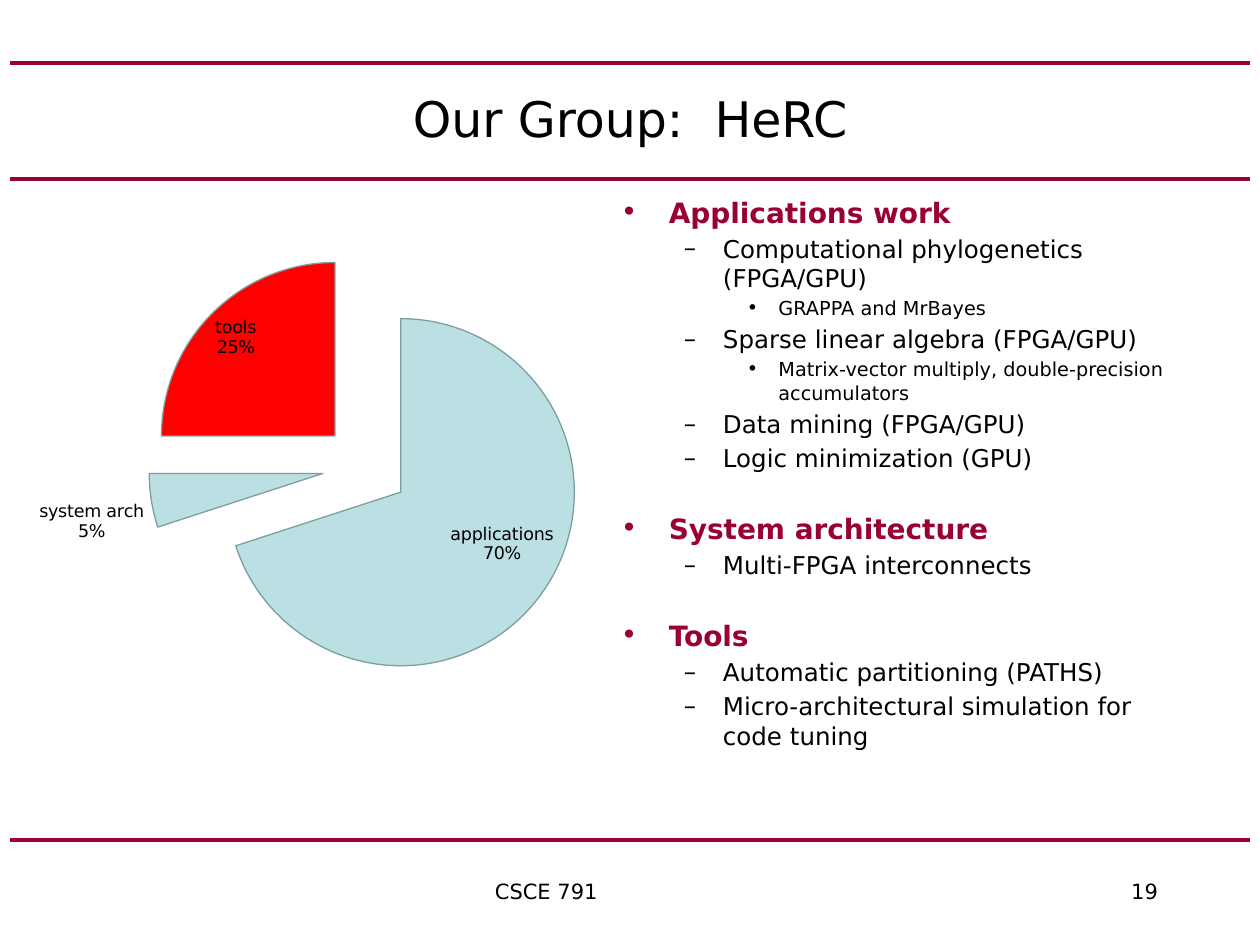
from lxml import etree
from pptx import Presentation
from pptx.chart.data import CategoryChartData
from pptx.dml.color import RGBColor
from pptx.enum.chart import XL_CHART_TYPE as ChartType, XL_LABEL_POSITION as LabelPosition
from pptx.enum.shapes import MSO_CONNECTOR as Connector
from pptx.enum.text import MSO_ANCHOR as Anchor, PP_ALIGN as Align
from pptx.oxml import parse_xml
from pptx.oxml.ns import nsdecls, qn
from pptx.util import Inches, Pt

FONT = "DejaVu Sans"
COLORS = {
    "garnet": "990033",
    "text": "000000",
    "pale": "BBE0E3",
    "red": "FF0000",
    "outline": "7F9C9E",
}
# Per outline level: text size, left indent, hanging indent, bullet
LEVELS = [
    (16, 0.38, 0.38, "•"),
    (14, 0.81, 0.31, "–"),
    (11, 1.25, 0.25, "•"),
]
SECTION_GAP = 22.3
OUTLINE = [
    (0, "Applications work"),
    (1, "Computational phylogenetics (FPGA/GPU)"),
    (2, "GRAPPA and MrBayes"),
    (1, "Sparse linear algebra (FPGA/GPU)"),
    (2, "Matrix-vector multiply, double-precision accumulators"),
    (1, "Data mining (FPGA/GPU)"),
    (1, "Logic minimization (GPU)"),
    (0, "System architecture"),
    (1, "Multi-FPGA interconnects"),
    (0, "Tools"),
    (1, "Automatic partitioning (PATHS)"),
    (1, "Micro-architectural simulation for code tuning"),
]
SHARES = [("applications", 70, "pale"), ("system arch", 5, "pale"), ("tools", 25, "red")]


def rgb(name):
    return RGBColor.from_string(COLORS[name])


def set_font(font, size, color="text", bold=False):
    font.name = FONT
    font.size = Pt(size)
    font.bold = bold
    font.color.rgb = rgb(color)


def add_frame(slide, left, top, width, height, anchor=Anchor.TOP):
    box = slide.shapes.add_textbox(Inches(left), Inches(top), Inches(width), Inches(height))
    frame = box.text_frame
    frame.word_wrap = True
    frame.vertical_anchor = anchor
    return frame


def write(paragraph, text, size=12, color="text", bold=False, align=Align.LEFT, before=0):
    paragraph.alignment = align
    paragraph.space_before = Pt(before)
    run = paragraph.add_run()
    run.text = text
    set_font(run.font, size, color, bold)


def add_rule(slide, y):
    rule = slide.shapes.add_connector(
        Connector.STRAIGHT, Inches(0.08), Inches(y), Inches(9.92), Inches(y))
    rule.line.color.rgb = rgb("garnet")
    rule.line.width = Pt(2.25)
    etree.SubElement(rule._element.spPr, qn("a:effectLst"))


def set_bullet(paragraph, character, indent, hanging):
    properties = paragraph._p.get_or_add_pPr()
    properties.set("marL", str(Inches(indent)))
    properties.set("indent", str(-Inches(hanging)))
    etree.SubElement(properties, qn("a:buFont"), typeface=FONT)
    etree.SubElement(properties, qn("a:buChar"), char=character)


def add_outline(slide):
    frame = add_frame(slide, 4.83, 1.5, 4.67, 5.08)
    for index, (level, text) in enumerate(OUTLINE):
        paragraph = frame.add_paragraph() if index else frame.paragraphs[0]
        size, indent, hanging, bullet = LEVELS[level]
        heading = level == 0
        before = SECTION_GAP if heading else 0.2 * size
        paragraph.level = level
        set_bullet(paragraph, bullet, indent, hanging)
        write(paragraph, text, size=size, bold=heading,
              color="garnet" if heading else "text", before=before if index else 0)


def set_plot_area(chart, x, y, width, height):
    """Place the plot by fractions of the chart's size."""
    plot_area = chart._chartSpace.chart.plotArea
    for old in plot_area.findall(qn("c:layout")):
        plot_area.remove(old)
    plot_area.insert(0, parse_xml(
        f'<c:layout {nsdecls("c")}><c:manualLayout><c:layoutTarget val="inner"/>'
        '<c:xMode val="edge"/><c:yMode val="edge"/>'
        f'<c:x val="{x}"/><c:y val="{y}"/><c:w val="{width}"/><c:h val="{height}"/>'
        '</c:manualLayout></c:layout>'))


def add_pie(slide):
    data = CategoryChartData()
    data.categories = [name for name, _, _ in SHARES]
    data.add_series("Series 1", [value for _, value, _ in SHARES])
    chart = slide.shapes.add_chart(
        ChartType.PIE_EXPLODED, Inches(0), Inches(1.83), Inches(4.92), Inches(3.75), data).chart
    chart.has_legend = False
    chart.has_title = False
    set_font(chart.font, 18)
    set_plot_area(chart, 0.24, 0.04, 0.7, 0.92)

    plot = chart.plots[0]
    plot.vary_by_categories = False
    series = plot.series[0]
    for explosion in series._element.findall(qn("c:explosion")):
        explosion.set("val", "25")
    for index, (_, _, color) in enumerate(SHARES):
        slice_format = series.points[index].format
        slice_format.fill.solid()
        slice_format.fill.fore_color.rgb = rgb(color)
        slice_format.line.color.rgb = rgb("outline")
        slice_format.line.width = Pt(0.75)

    labels = series.data_labels
    labels.show_category_name = True
    labels.show_percentage = True
    labels.show_value = False
    labels.position = LabelPosition.BEST_FIT
    set_font(labels.font, 10)
    separator = etree.Element(qn("c:separator"))
    separator.text = "\n"
    labels._element.find(qn("c:showBubbleSize")).addnext(separator)


def add_footer(slide):
    paragraph = add_frame(slide, 2.83, 6.92, 7, 0.33).paragraphs[0]
    tabs = etree.SubElement(paragraph._p.get_or_add_pPr(), qn("a:tabLst"))
    for position in (1, 6.05):
        etree.SubElement(tabs, qn("a:tab"), pos=str(Inches(position)), algn="l")
    write(paragraph, "\tCSCE 791\t19")


def main():
    presentation = Presentation()
    presentation.slide_width = Inches(10)
    presentation.slide_height = Inches(7.5)
    slide = presentation.slides.add_slide(presentation.slide_layouts[6])
    for y in (0.5, 1.42, 6.67):
        add_rule(slide, y)
    title = add_frame(slide, 0.5, 0.5, 9, 0.87, anchor=Anchor.MIDDLE)
    write(title.paragraphs[0], "Our Group:  HeRC", size=28, align=Align.CENTER)
    add_outline(slide)
    add_pie(slide)
    add_footer(slide)
    presentation.save("out.pptx")


if __name__ == "__main__":
    main()
